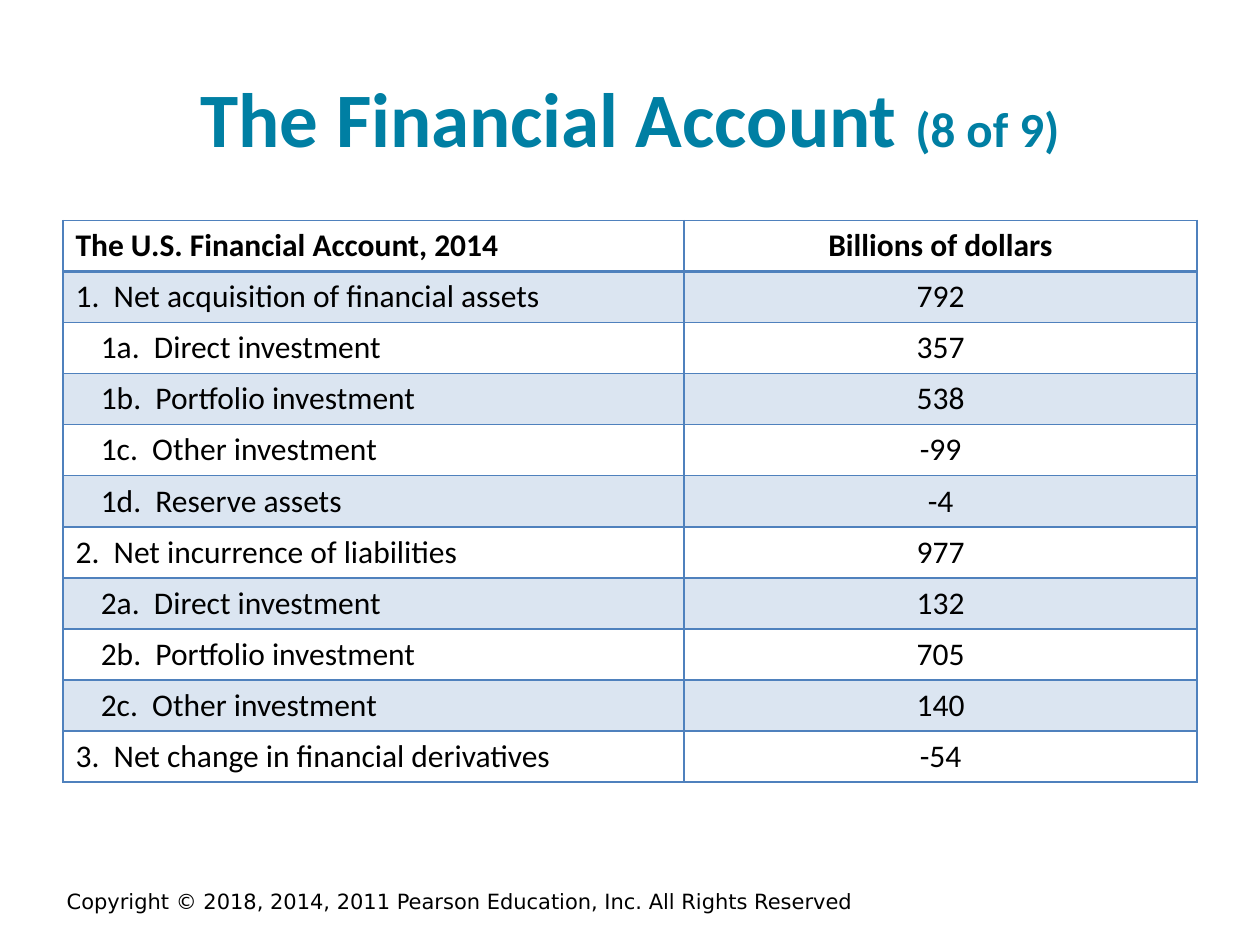
from typing import NamedTuple

from lxml.etree import SubElement
from pptx import Presentation
from pptx.dml.color import RGBColor
from pptx.enum.text import MSO_ANCHOR, PP_ALIGN
from pptx.oxml.ns import qn
from pptx.util import Inches, Pt

TEAL = RGBColor(0x00, 0x7F, 0xA3)
BLUE = RGBColor(0x4F, 0x81, 0xBD)
BLACK = RGBColor(0x00, 0x00, 0x00)
BAND_ALPHA = "20000"
BORDER_SIDES = ("lnL", "lnR", "lnT", "lnB")


class AccountRow(NamedTuple):
    label: str
    amount: str
    indent: float = 0


ROWS = [
    AccountRow("The U.S. Financial Account, 2014", "Billions of dollars"),
    AccountRow("1.  Net acquisition of financial assets", "792"),
    AccountRow("1a.  Direct investment", "357", 0.2),
    AccountRow("1b.  Portfolio investment", "538", 0.2),
    AccountRow("1c.  Other investment", "-99", 0.2),
    AccountRow("1d.  Reserve assets", "-4", 0.2),
    AccountRow("2.  Net incurrence of liabilities", "977"),
    AccountRow("2a.  Direct investment", "132", 0.2),
    AccountRow("2b.  Portfolio investment", "705", 0.2),
    AccountRow("2c.  Other investment", "140", 0.2),
    AccountRow("3.  Net change in financial derivatives", "-54"),
]
COLUMN_WIDTHS = (4.93, 4.07)
TABLE_HEIGHT = 4.46


def add_span(para, text: str, *, size: float, color: RGBColor = BLACK,
             font: str = "Calibri", bold: bool = False) -> None:
    span = para.add_run()
    span.text = text
    span.font.name = font
    span.font.size = Pt(size)
    span.font.bold = bold
    span.font.color.rgb = color


def add_centered_box(page, left: float, top: float, width: float, height: float):
    box = page.shapes.add_textbox(Inches(left), Inches(top), Inches(width), Inches(height))
    box.text_frame.word_wrap = True
    box.text_frame.vertical_anchor = MSO_ANCHOR.MIDDLE
    para = box.text_frame.paragraphs[0]
    para.alignment = PP_ALIGN.CENTER
    return para


def set_borders(cell, bottom_width: float) -> None:
    properties = cell._tc.get_or_add_tcPr()
    for side in BORDER_SIDES:
        width = bottom_width if side == "lnB" else 1
        line = SubElement(properties, qn(f"a:{side}"), w=str(Pt(width)))
        fill = SubElement(line, qn("a:solidFill"))
        SubElement(fill, qn("a:srgbClr"), val=str(BLUE))


def set_fill(cell, banded: bool) -> None:
    if not banded:
        cell.fill.background()
        return
    cell.fill.solid()
    cell.fill.fore_color.rgb = BLUE
    color = cell._tc.tcPr.find(qn("a:solidFill")).find(qn("a:srgbClr"))
    SubElement(color, qn("a:alpha"), val=BAND_ALPHA)


def add_account_table(page) -> None:
    frame = page.shapes.add_table(
        len(ROWS), len(COLUMN_WIDTHS), Inches(0.5), Inches(1.75),
        Inches(sum(COLUMN_WIDTHS)), Inches(TABLE_HEIGHT))
    table = frame.table
    table.horz_banding = False
    for column, width in zip(table.columns, COLUMN_WIDTHS):
        column.width = Inches(width)
    for index, row in enumerate(ROWS):
        table.rows[index].height = Inches(TABLE_HEIGHT / len(ROWS))
        header = index == 0
        for column_index, text in enumerate((row.label, row.amount)):
            cell = table.cell(index, column_index)
            set_borders(cell, 2 if header else 1)
            set_fill(cell, index % 2 == 1)
            para = cell.text_frame.paragraphs[0]
            if column_index:
                para.alignment = PP_ALIGN.CENTER
            elif row.indent:
                para._p.get_or_add_pPr().set("marL", str(Inches(row.indent)))
            add_span(para, text, size=18, bold=header)


def main() -> None:
    deck = Presentation()
    deck.slide_width, deck.slide_height = Inches(10), Inches(7.5)
    page = deck.slides.add_slide(deck.slide_layouts[6])

    copyright_line = add_centered_box(page, -0.14, 6.97, 7.58, 0.36)
    add_span(copyright_line,
             "Copyright © 2018, 2014, 2011 Pearson Education, Inc. All Rights Reserved",
             size=12, font="DejaVu Sans")

    title = add_centered_box(page, 0.5, 0.3, 9, 1.25)
    add_span(title, "The Financial Account ", size=44, color=TEAL, bold=True)
    add_span(title, "(8 of 9)", size=28, color=TEAL, bold=True)

    add_account_table(page)
    deck.save("out.pptx")


if __name__ == "__main__":
    main()
